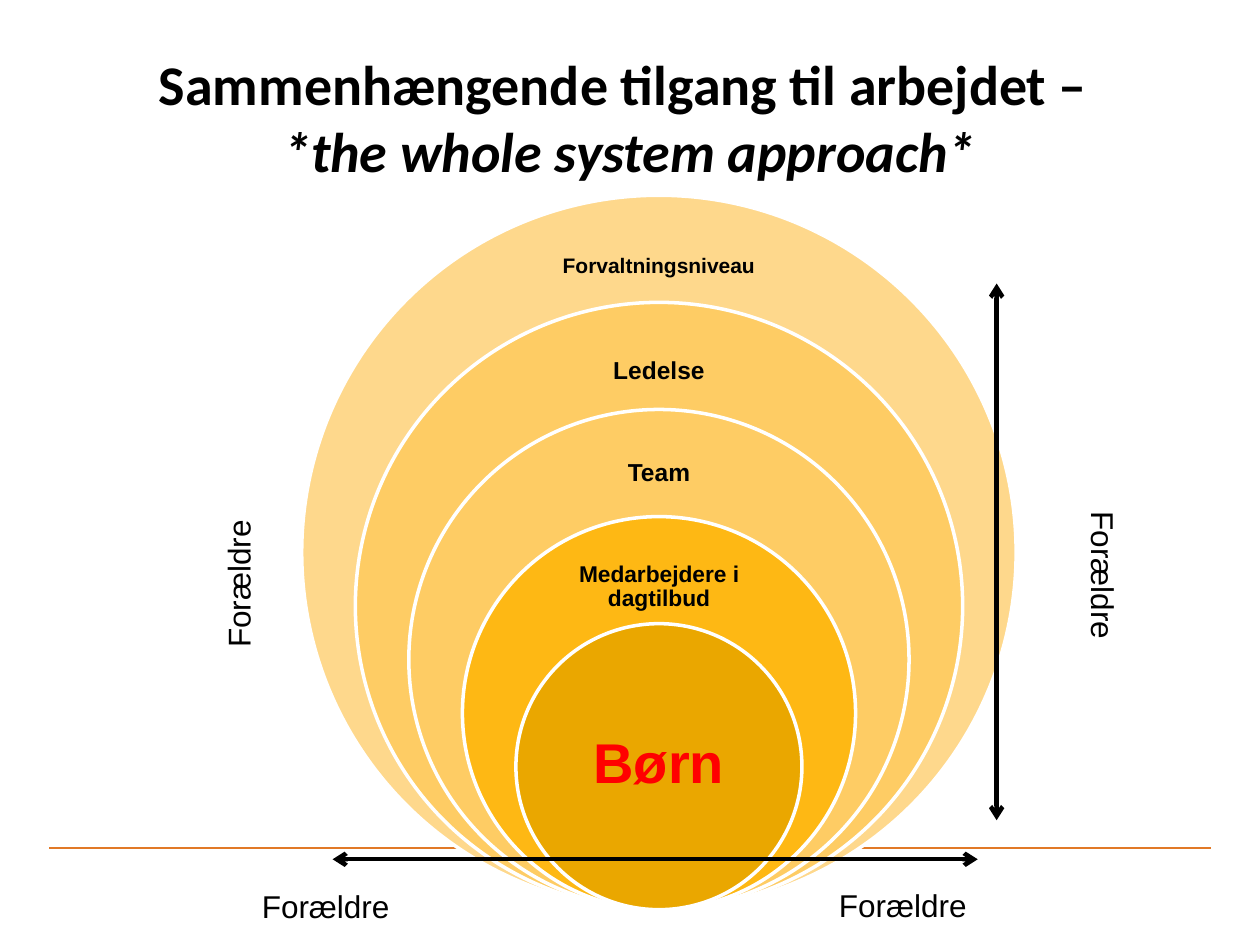
from dataclasses import dataclass

from lxml.etree import SubElement
from pptx import Presentation
from pptx.dml.color import RGBColor
from pptx.enum.shapes import MSO_CONNECTOR as Connector, MSO_SHAPE as Shape
from pptx.enum.text import MSO_ANCHOR as Anchor, MSO_AUTO_SIZE as AutoSize, PP_ALIGN as Align
from pptx.oxml.ns import qn
from pptx.util import Inches, Pt


@dataclass(frozen=True)
class Theme:
    heading_font: str = "Calibri"
    body_font: str = "Arial"
    ink: str = "000000"
    accent: str = "FF0000"
    rule: str = "E17926"
    ring_line: str = "FFFFFF"
    rings: tuple = ("FED88C", "FECC64", "FECC64", "FEB814", "EAA700")
    title_size: int = 32
    parent_size: int = 18


class SlideBuilder:
    """Draws on a grid of 10 columns and 7.5 rows."""

    COLUMNS = 10

    def __init__(self, deck, theme):
        self.theme = theme
        self.cell = deck.slide_width / self.COLUMNS
        self.page = deck.slides.add_slide(deck.slide_layouts[6])

    def grid(self, *lengths):
        return [round(length * self.cell) for length in lengths]

    def line(self, start, end, color, width, arrows=False):
        line = self.page.shapes.add_connector(
            Connector.STRAIGHT, *self.grid(*start, *end))
        line.line.color.rgb = RGBColor.from_string(color)
        line.line.width = Pt(width)
        properties = line._element.spPr
        if arrows:
            outline = line.line._get_or_add_ln()
            for end_name in ("a:headEnd", "a:tailEnd"):
                SubElement(outline, qn(end_name), type="arrow")
        SubElement(properties, qn("a:effectLst"))

    def circle(self, center, bottom, diameter, fill):
        circle = self.page.shapes.add_shape(Shape.OVAL, *self.grid(
            center - diameter / 2, bottom - diameter, diameter, diameter))
        circle.shadow.inherit = False
        circle.fill.solid()
        circle.fill.fore_color.rgb = RGBColor.from_string(fill)
        circle.line.color.rgb = RGBColor.from_string(self.theme.ring_line)
        circle.line.width = Pt(2)

    def text(self, place, words, size, color=None, font=None, bold=False, align=Align.LEFT):
        box = self.page.shapes.add_textbox(*self.grid(*place))
        frame = box.text_frame
        frame.word_wrap = True
        para = frame.paragraphs[0]
        para.text = words
        para.alignment = align
        para.font.name = font or self.theme.body_font
        para.font.size = Pt(size)
        para.font.bold = bold
        para.font.color.rgb = RGBColor.from_string(color or self.theme.ink)
        return frame

    def title(self, place, first_line, second_line):
        frame = self.text(place, first_line + "\v", self.theme.title_size,
                          font=self.theme.heading_font, bold=True, align=Align.CENTER)
        frame.vertical_anchor = Anchor.MIDDLE
        span = frame.paragraphs[0].add_run()
        span.text = second_line
        span.font.italic = True

    def ring_label(self, center, top, width, height, words, size, inset, color, lift=0):
        frame = self.text((center - width / 2, top, width, height), words, size,
                          color, bold=True, align=Align.CENTER)
        frame.vertical_anchor = Anchor.MIDDLE
        frame.paragraphs[0].line_spacing = 0.9
        frame.margin_left = frame.margin_right = frame.margin_top = Inches(inset)
        frame.margin_bottom = Inches(inset + lift)

    def parent_label(self, place, direction=None):
        frame = self.text(place, "Forældre", self.theme.parent_size)
        frame.auto_size = AutoSize.SHAPE_TO_FIT_TEXT
        if direction:
            frame._txBody.bodyPr.set("vert", direction)


def main():
    deck = Presentation()
    deck.slide_width, deck.slide_height = Inches(10), Inches(7.5)
    theme = Theme()
    slide = SlideBuilder(deck, theme)

    # Footer rule and title
    slide.line((0.39, 6.73), (9.61, 6.73), theme.rule, 0.75)
    slide.title((0.5, 0.3, 9, 1.25),
                "Sammenhængende tilgang til arbejdet – ", "*the whole system approach*")

    # Nested circles that share their lowest point
    center, bottom, largest, step = 5.23, 7.22, 5.67, 0.85
    # top, width, height, words, size, inset, colour, lift
    labels = [
        (1.83, 2.13, 0.57, "Forvaltningsniveau", 12, 0.09, theme.ink),
        (2.67, 2.08, 0.55, "Ledelse", 14, 0.11, theme.ink),
        (3.52, 2.05, 0.55, "Team", 14, 0.11, theme.ink, 0.07),
        (4.38, 1.68, 0.56, "Medarbejdere i dagtilbud", 13, 0.1, theme.ink),
        (5.51, 1.6, 1.13, "Børn", 32, 0.25, theme.accent),
    ]
    for level, (fill, label) in enumerate(zip(theme.rings, labels)):
        slide.circle(center, bottom, largest - level * step, fill)
        slide.ring_label(center, *label)

    # Double-headed arrows
    slide.line((7.91, 2.25), (7.91, 6.51), theme.ink, 2.5, arrows=True)
    slide.line((7.76, 6.82), (2.64, 6.82), theme.ink, 2.5, arrows=True)

    # Parents on every side
    slide.parent_label((8.46, 3.96, 0.5, 2.52), "vert")
    slide.parent_label((1.69, 2.72, 0.5, 2.52), "vert270")
    slide.parent_label((6.56, 6.98, 2.46, 0.4))
    slide.parent_label((1.98, 6.99, 2.46, 0.4))

    deck.save("out.pptx")


if __name__ == "__main__":
    main()
